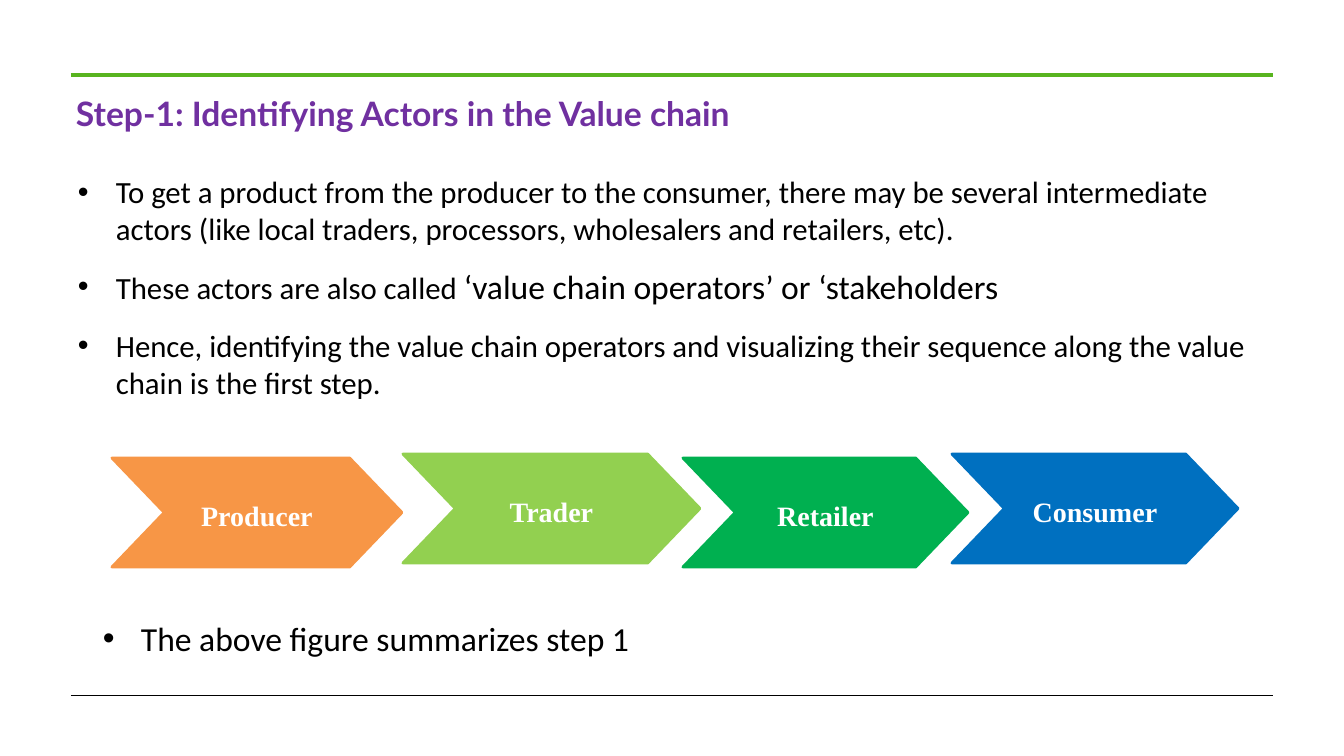
from lxml import etree
from pptx import Presentation
from pptx.dml.color import RGBColor
from pptx.enum.shapes import MSO_CONNECTOR as LINE, MSO_SHAPE as SHAPE
from pptx.enum.text import MSO_ANCHOR as ANCHOR, PP_ALIGN as ALIGN
from pptx.oxml.ns import qn
from pptx.util import Pt

PX = 914400 / 100.8


def box(*sizes):
    """Turn px lengths into EMU."""
    return [round(size * PX) for size in sizes]


def style(font, name, size, color, bold=False):
    for key, value in dict(name=name, size=Pt(size), bold=bold).items():
        setattr(font, key, value)
    font.color.rgb = RGBColor.from_string(color)


deck = Presentation()
deck.slide_width, deck.slide_height = box(1344, 756)
slide = deck.slides.add_slide(deck.slide_layouts[6])
shapes = slide.shapes

# Rules above and below the content
for y, color, width in [(75, "58B41F", 3), (695, "000000", 0.48)]:
    rule = shapes.add_connector(LINE.STRAIGHT, *box(71, y, 1273, y))
    rule.line.color.rgb = RGBColor.from_string(color)
    rule.line.width = Pt(width)
    etree.SubElement(rule._element.spPr, qn("a:effectLst"))

# Title
frame = shapes.add_textbox(*box(76, 93, 1053, 40)).text_frame
for side in ("left", "top", "right", "bottom"):
    setattr(frame, "margin_" + side, 0)
frame.word_wrap = True
run = frame.paragraphs[0].add_run()
run.text = "Step-1: Identifying Actors in the Value chain"
style(run.font, "Lato", 24, "7030A0", True)

# Bulleted text: each paragraph is its space before and its (text, size) runs
points = [
    (0, [("To get a product from the producer to the consumer, there may be several "
          "intermediate actors (like local traders, processors, wholesalers and "
          "retailers, etc).", 22)]),
    (13.4, [("These actors are also called ", 22),
            ("‘value chain operators’ or ‘stakeholders", 24)]),
    (14.6, [("Hence, identifying the value chain operators and visualizing their "
             "sequence along the value chain is the first step.", 22)]),
]
closing = [(0, [("The above figure summarizes step 1", 24)])]
for place, items in [((68, 168, 1218, 239), points), ((93, 613, 877, 50), closing)]:
    frame = shapes.add_textbox(*box(*place)).text_frame
    frame.word_wrap = True
    for i, (gap, parts) in enumerate(items):
        para = frame.add_paragraph() if i else frame.paragraphs[0]
        if gap:
            para.space_before = Pt(gap)
        props = para._p.get_or_add_pPr()
        indent, = box(38)
        props.set("marL", str(indent))
        props.set("indent", str(-indent))
        etree.SubElement(props, qn("a:buFont"), typeface="Arial")
        etree.SubElement(props, qn("a:buChar"), char="•")
        for text, size in parts:
            run = para.add_run()
            run.text = text
            style(run.font, "Calibri", size, "000000")

# Chain of actors
actors = [
    ("Producer", 112, 458, 290, "F79646"),
    ("Trader", 403, 454, 297, "92D050"),
    ("Retailer", 683, 458, 285, "00B050"),
    ("Consumer", 952, 454, 286, "0070C0"),
]
for name, x, y, width, color in actors:
    actor = shapes.add_shape(SHAPE.CHEVRON, *box(x, y, width, 109))
    actor.adjustments[0] = 0.48
    actor.shadow.inherit = False
    actor.fill.solid()
    for part in (actor.fill.fore_color, actor.line.color):
        part.rgb = RGBColor.from_string(color)
    actor.line.width = Pt(2)
    frame = actor.text_frame
    frame.vertical_anchor = ANCHOR.MIDDLE
    para = frame.paragraphs[0]
    para.alignment = ALIGN.CENTER
    para.line_spacing = 1.15
    run = para.add_run()
    run.text = name
    style(run.font, "Times New Roman", 20, "FFFFFF", True)

deck.save("out.pptx")
